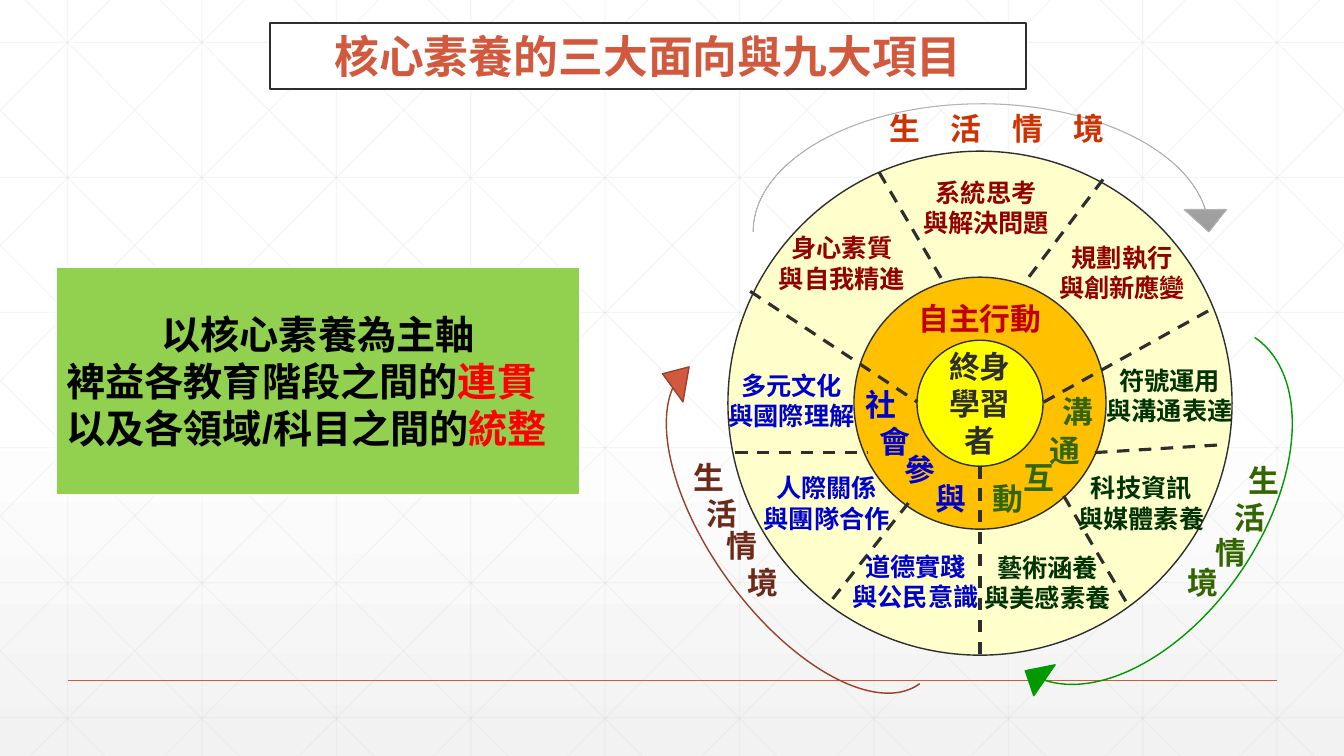
from dataclasses import dataclass

from lxml import etree
from pptx import Presentation
from pptx import util as u
from pptx.dml.color import RGBColor
from pptx.enum import dml, shapes, text
from pptx.oxml.ns import qn

PX = 9144  # 100 px to the inch
WIDTH, HEIGHT = 1333, 750


@dataclass(frozen=True)
class Theme:
    font: str = "Arial"
    title_size: int = 32
    message_size: int = 28
    ring_size: int = 22
    item_size: int = 18
    ink: str = "2D2E2D"
    black: str = "000000"
    white: str = "FFFFFF"
    haze: str = "F2F2F2"
    grid: str = "D8D8D8"
    accent: str = "D15A3E"
    accent_dark: str = "98412D"
    brown: str = "6D291A"
    highlight: str = "FF0000"
    lime: str = "92D050"
    orange: str = "CC3300"
    crimson: str = "C00000"
    maroon: str = "920000"
    blue: str = "0000CC"
    olive: str = "336600"
    forest: str = "003300"
    arrow_green: str = "009900"
    silver: str = "B2B2B2"
    silver_light: str = "BABABA"
    silver_dark: str = "9D9D9D"
    cream: str = "FFFFCC"
    amber: str = "FFC000"
    yellow: str = "FFFF00"


THEME = Theme()

# Content
TITLE = "核心素養的三大面向與九大項目"
MESSAGE = [
    [("以核心素養為主軸", THEME.black)],
    [("裨益各教育階段之間的", THEME.black), ("連貫", THEME.highlight),
     ("以及各領域/科目之間的", THEME.black), ("統整", THEME.highlight)],
]
CORE = ["終身", "學習者"]
RINGS = [(500, THEME.cream), (250, THEME.amber), (125, THEME.yellow)]
CENTER = (972, 400)
SPOKES = [
    (744, 289, 910, 399), (972, 649, 972, 462), (1035, 399, 1201, 307),
    (872, 171, 937, 282), (1094, 178, 1015, 282), (729, 449, 861, 449),
    (901, 499, 822, 599), (1086, 449, 1216, 441), (1055, 492, 1118, 599),
]
ITEMS = [
    (THEME.maroon, [("系統思考", "與解決問題", 905, 171),
                    ("規劃執行", "與創新應變", 1040, 235),
                    ("身心素質", "與自我精進", 762, 226)]),
    (THEME.forest, [("符號運用", "與溝通表達", 1087, 357),
                    ("科技資訊", "與媒體素養", 1059, 464),
                    ("藝術涵養", "與美感素養", 966, 543)]),
    (THEME.blue, [("多元文化", "與國際理解", 712, 362),
                  ("人際關係", "與團隊合作", 747, 464),
                  ("道德實踐", "與公民意識", 835, 542)]),
]
STRAIGHT_LABELS = [
    ("生　活　情　境", THEME.orange, (872, 104, 236, 47)),
    ("自主行動", THEME.crimson, (901, 292, 144, 47)),
]
CURVED_LABELS = [
    ("生活情境", THEME.olive, [(1228, 453), (1215, 490), (1196, 525), (1168, 554)]),
    ("生活情境", THEME.brown, [(678, 450), (691, 486), (711, 518), (732, 554)]),
    ("社會參與", THEME.blue, [(849, 378), (862, 414), (887, 442), (918, 471)]),
    ("溝通互動", THEME.olive, [(1044, 385), (1031, 423), (1005, 450), (975, 471)]),
]
# box, rotation, arrowhead width and depth, fill, line, line width
ARROWS = [
    ((747, 103, 473, 127), 0, 0.331, 0.174,
     (THEME.silver_light, THEME.silver_dark), THEME.silver, 0.75),
    ((965, 482, 420, 120), 124.6, 0.31, 0.174,
     THEME.arrow_green, THEME.arrow_green, 1),
    ((552, 495, 406, 93), 234, 0.371, 0.272,
     THEME.accent, THEME.accent_dark, 1),
]

presentation = Presentation()
presentation.slide_width, presentation.slide_height = WIDTH * PX, HEIGHT * PX
slide = presentation.slides.add_slide(presentation.slide_layouts[5])


# Helpers
def emu(lengths):
    return [round(length * PX) for length in lengths]


def rgb(colour):
    return RGBColor.from_string(colour)


def paint_gradient(fill, start, end, start_at=0):
    fill.gradient()
    fill.gradient_angle = 270
    first, last = fill.gradient_stops
    first.color.rgb, first.position = rgb(start), start_at
    last.color.rgb, last.position = rgb(end), 1


def paint(shape, fill, line, width):
    shape.shadow.inherit = False
    if isinstance(fill, tuple):
        paint_gradient(shape.fill, *fill)
    else:
        shape.fill.solid()
        shape.fill.fore_color.rgb = rgb(fill)
    shape.line.color.rgb = rgb(line)
    shape.line.width = u.Pt(width)


def add_shape(kind, box, fill, line=THEME.ink, width=1):
    shape = slide.shapes.add_shape(kind, *emu(box))
    paint(shape, fill, line, width)
    return shape


def add_line(ends, colour, width, dash=None, opacity=None):
    line = slide.shapes.add_connector(shapes.MSO_CONNECTOR.STRAIGHT, *emu(ends))
    line.line.color.rgb = rgb(colour)
    line.line.width = u.Pt(width)
    if dash:
        line.line.dash_style = dash
    properties = line._element.spPr
    if opacity:
        colour_node = next(properties.iter(qn("a:srgbClr")))
        etree.SubElement(colour_node, qn("a:alpha"), val=str(opacity * 1000))
    etree.SubElement(properties, qn("a:effectLst"))


def write(shape, paragraphs, size, colour, align=text.PP_ALIGN.CENTER,
          anchor=text.MSO_ANCHOR.TOP, inset=5):
    frame = shape.text_frame
    frame.word_wrap = True
    frame.auto_size = text.MSO_AUTO_SIZE.NONE
    frame.vertical_anchor = anchor
    frame.margin_left = frame.margin_right = 10 * PX
    frame.margin_top = frame.margin_bottom = inset * PX
    for index, content in enumerate(paragraphs):
        paragraph = frame.add_paragraph() if index else frame.paragraphs[0]
        paragraph.alignment = align
        font = paragraph.font
        font.name, font.size, font.bold = THEME.font, u.Pt(size), True
        font.color.rgb = rgb(colour)
        runs = [(content, colour)] if isinstance(content, str) else content
        for words, run_colour in runs:
            run = paragraph.add_run()
            run.text = words
            if run_colour != colour:
                run.font.color.rgb = rgb(run_colour)
    return frame


def add_label(box, lines, size, colour, align=text.PP_ALIGN.LEFT):
    write(slide.shapes.add_textbox(*emu(box)), lines, size, colour, align)


# Background and grid
paint_gradient(slide.background.fill, THEME.white, THEME.haze, 0.53)
STEP, LEAN = WIDTH / 10, 0.994
grid = [(67 + STEP * i, 0, 67 + STEP * i, HEIGHT) for i in range(10)]
grid += [(0, 42 + 134 * i, WIDTH, 42 + 134 * i) for i in range(6)]
for first, lean, steps in ((25, LEAN, range(-5, 10)), (109, -LEAN, range(15))):
    for i in steps:
        x = first + STEP * i
        sides = sorted([-x / lean, (WIDTH - x) / lean])
        top, bottom = max(0, sides[0]), min(HEIGHT, sides[1])
        grid.append((x + lean * top, top, x + lean * bottom, bottom))
for ends in grid:
    add_line(ends, THEME.grid, 0.75, opacity=24)
add_line((67, 675, 1267, 675), THEME.accent, 1)

# Arrows around the wheel
for box, rotation, head_width, head_depth, fill, line, width in ARROWS:
    arrow = add_shape(shapes.MSO_SHAPE.CURVED_DOWN_ARROW, box, fill, line, width)
    arrow.rotation = rotation
    for index, value in enumerate((0, head_width, head_depth)):
        arrow.adjustments[index] = value

# Wheel
for size, fill in RINGS:
    box = (CENTER[0] - size / 2, CENTER[1] - size / 2, size, size)
    disc = add_shape(shapes.MSO_SHAPE.OVAL, box, fill)
write(disc, CORE, THEME.ring_size, THEME.ink, anchor=text.MSO_ANCHOR.MIDDLE)
for ends in SPOKES:
    add_line(ends, THEME.ink, 2.25, dml.MSO_LINE.DASH)

# Wheel labels
for words, colour, box in STRAIGHT_LABELS:
    add_label(box, [words], THEME.ring_size, colour)
for words, colour, places in CURVED_LABELS:
    for letter, (x, y) in zip(words, places):
        add_label((x, y, 51, 47), [letter], THEME.ring_size, colour)
for colour, items in ITEMS:
    for upper, lower, x, y in items:
        add_label((x, y, 146, 71), [upper, lower], THEME.item_size, colour,
                  text.PP_ALIGN.CENTER)

# Message panel
panel = add_shape(shapes.MSO_SHAPE.RECTANGLE, (56, 265, 519, 226),
                  THEME.lime, THEME.white, 1.5)
message = write(panel, MESSAGE, THEME.message_size, THEME.black,
                anchor=text.MSO_ANCHOR.MIDDLE, inset=10)
message.paragraphs[1].alignment = text.PP_ALIGN.LEFT

# Title, in front of the grid
title = slide.shapes.title
title.left, title.top, title.width, title.height = emu((268, 23, 750, 65))
title.fill.solid()
title.fill.fore_color.rgb = rgb(THEME.white)
title.line.color.rgb = rgb(THEME.ink)
title.line.width = u.Pt(1.5)
heading = write(title, [TITLE], THEME.title_size, THEME.accent,
                anchor=text.MSO_ANCHOR.BOTTOM)
heading.paragraphs[0].line_spacing = 0.9
slide.shapes._spTree.append(title._element)

presentation.save("out.pptx")
